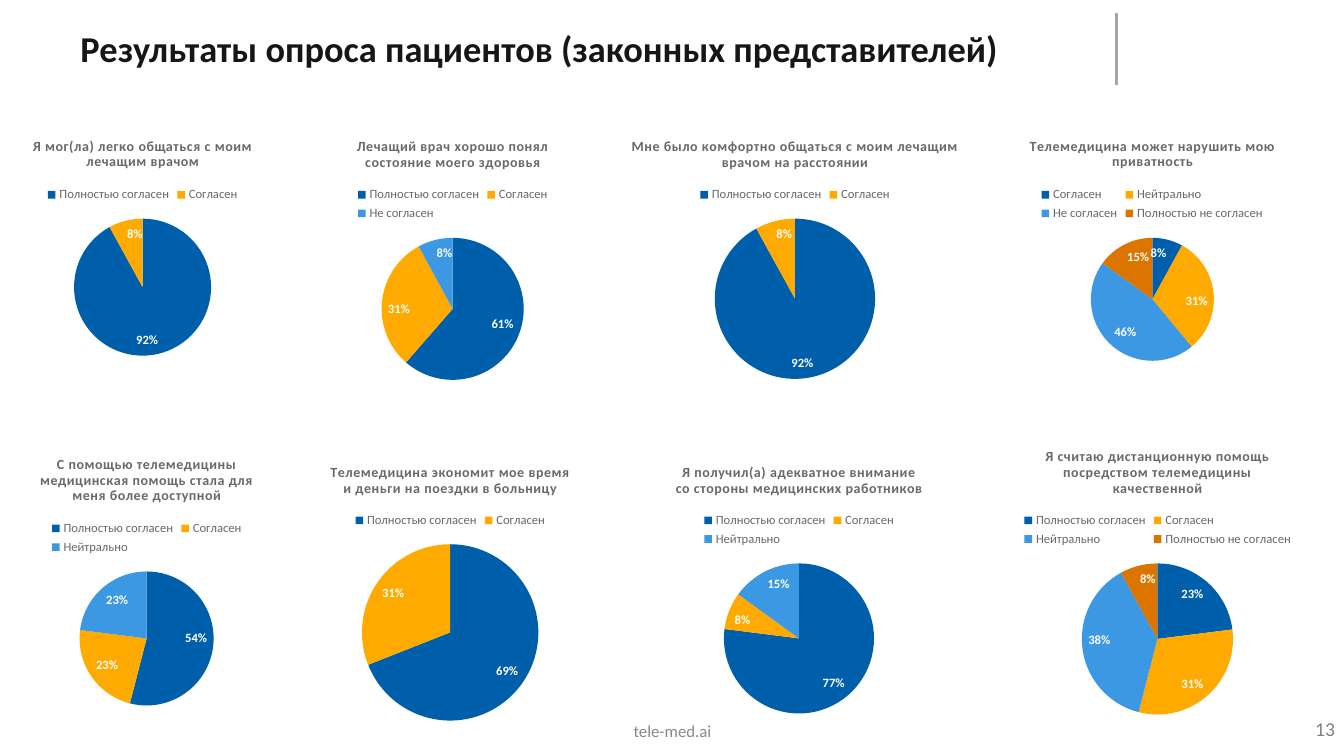
from dataclasses import dataclass
from lxml import etree
from pptx import Presentation
from pptx.chart.data import CategoryChartData
from pptx.dml.color import RGBColor
from pptx.enum.chart import XL_CHART_TYPE, XL_LABEL_POSITION, XL_LEGEND_POSITION
from pptx.enum.shapes import MSO_CONNECTOR
from pptx.enum.text import MSO_ANCHOR, PP_ALIGN
from pptx.oxml.ns import qn
from pptx.util import Inches, Pt

PIE = XL_CHART_TYPE.PIE
IN_END = XL_LABEL_POSITION.INSIDE_END
TOP = XL_LEGEND_POSITION.TOP
STRAIGHT = MSO_CONNECTOR.STRAIGHT
MIDDLE = MSO_ANCHOR.MIDDLE
LEFT, CENTER, RIGHT = PP_ALIGN.LEFT, PP_ALIGN.CENTER, PP_ALIGN.RIGHT


@dataclass(frozen=True)
class Theme:
    font: str = "Calibri"
    ink: str = "151616"
    grey: str = "656A6A"
    page: str = "808080"
    foot: str = "888888"
    rule: str = "A6A6A6"
    white: str = "FFFFFF"
    slices: tuple = ("005FAB", "FFAA00", "3D98E3", "DB7500")
    head_size: int = 26
    page_size: int = 14
    foot_size: int = 12
    title_size: int = 10
    small_size: int = 9


THEME = Theme()
FULL, AGREE, MID, NO, NEVER = (
    "Полностью согласен", "Согласен", "Нейтрально",
    "Не согласен", "Полностью не согласен")

# box, title, title lines, legend rows, legend width, answers
PIES = [
    ((0, 1.23, 2.83, 2.44), "Я мог(ла) легко общаться с моим лечащим врачом",
     2, 1, 1.96, {FULL: 92, AGREE: 8}),
    ((2.97, 1.23, 3.04, 2.68), "Лечащий врач хорошо понял состояние моего здоровья",
     2, 2, 1.96, {FULL: 62, AGREE: 31, NO: 8}),
    ((5.8, 1.23, 4.17, 2.67),
     "Мне было комфортно общаться с моим лечащим врачом на расстоянии",
     2, 1, 1.96, {FULL: 92, AGREE: 8}),
    ((9.66, 1.23, 3.54, 2.49), "Телемедицина может нарушить мою приватность",
     2, 2, 2.28, {AGREE: 8, MID: 31, NO: 46, NEVER: 15}),
    ((0, 4.38, 2.91, 2.76),
     "С помощью телемедицины медицинская помощь стала для меня более доступной",
     3, 2, 1.96, {FULL: 54, AGREE: 23, MID: 23}),
    ((2.89, 4.46, 3.15, 2.83),
     "Телемедицина экономит мое время и деньги на поездки в больницу",
     2, 1, 1.96, {FULL: 69, AGREE: 31}),
    ((6.35, 4.46, 3.15, 2.76),
     "Я получил(а) адекватное внимание со стороны медицинских работников",
     2, 2, 1.96, {FULL: 77, AGREE: 8, MID: 15}),
    ((9.82, 4.3, 3.32, 2.93),
     "Я считаю дистанционную помощь посредством телемедицины качественной",
     3, 2, 2.72, {FULL: 23, AGREE: 31, MID: 38, NEVER: 8}),
]


def style(font, size, color, bold=False):
    font.name = THEME.font
    font.size = Pt(size)
    font.bold = bold
    font.color.rgb = RGBColor.from_string(color)


def add_text(slide, box, text, size, color, align, bold=False, pad=0.05):
    shape = slide.shapes.add_textbox(*map(Inches, box))
    frame = shape.text_frame
    frame.word_wrap = True
    frame.vertical_anchor = MIDDLE
    frame.margin_left = frame.margin_right = Inches(pad)
    frame.margin_top = frame.margin_bottom = Inches(0.04)
    para = frame.paragraphs[0]
    para.alignment = align
    run = para.add_run()
    run.text = text
    style(run.font, size, color, bold)


def set_layout(part, inner=False, **sizes):
    """Place a chart part by fractions of the chart's size."""
    for old in part.findall(qn("c:layout")):
        part.remove(old)
    layout = etree.Element(qn("c:layout"))
    manual = etree.SubElement(layout, qn("c:manualLayout"))
    marks = [("layoutTarget", "inner")] if inner else []
    marks += [("xMode", "edge"), ("yMode", "edge")]
    for tag, val in marks + list(sizes.items()):
        etree.SubElement(manual, qn("c:" + tag)).set("val", str(val))
    spot = part.find(qn("c:legendPos"))
    if spot is None:
        part.insert(0, layout)
    else:
        spot.addnext(layout)


def add_pie(slide, box, title, lines, rows, span, votes):
    data = CategoryChartData()
    data.categories = list(votes)
    data.add_series("Series 1", list(votes.values()))
    frame = slide.shapes.add_chart(PIE, *map(Inches, box), data)
    chart = frame.chart
    style(chart.font, THEME.title_size, THEME.ink)

    chart.has_title = True
    run = chart.chart_title.text_frame.paragraphs[0].add_run()
    run.text = title
    style(run.font, THEME.title_size, THEME.grey, True)
    run.font._element.set("spc", "50")
    chart.chart_title.include_in_layout = False

    chart.has_legend = True
    legend = chart.legend
    legend.position = TOP
    legend.include_in_layout = False
    style(legend.font, THEME.small_size, THEME.grey)

    plot = chart.plots[0]
    plot.vary_by_categories = True
    series = plot.series[0]
    for i, color in enumerate(THEME.slices[:len(votes)]):
        fill = series.points[i].format.fill
        fill.solid()
        fill.fore_color.rgb = RGBColor.from_string(color)
    labels = series.data_labels
    labels.show_percentage = True
    labels.show_value = False
    labels.number_format = "0%"
    labels.number_format_is_linked = False
    labels.position = IN_END
    style(labels.font, THEME.small_size, THEME.white, True)

    wide, high = box[2:]
    key_top = 0.27 + 0.16 * lines
    pie_top = key_top + 0.16 + 0.19 * rows
    size = high - pie_top - 0.14
    set_layout(legend._element, x=(wide - span) / 2 / wide, y=key_top / high)
    area = chart._chartSpace.chart.plotArea
    set_layout(area, True, x=(wide - size) / 2 / wide, y=pie_top / high,
               w=size / wide, h=size / high)


def add_frame(slide):
    """Add the heading, rule, footer and page number."""
    line = slide.shapes.add_connector(
        STRAIGHT, *map(Inches, (11.07, 0.13, 11.07, 0.84)))
    line.line.color.rgb = RGBColor.from_string(THEME.rule)
    line.line.width = Pt(2)
    etree.SubElement(line._element.spPr, qn("a:effectLst"))
    add_text(slide, (11.46, 7.02, 1.88, 0.41), "13",
             THEME.page_size, THEME.page, RIGHT, pad=0.1)
    add_text(slide, (0.7, 0, 9.93, 0.96),
             "Результаты опроса пациентов (законных представителей)",
             THEME.head_size, THEME.ink, LEFT, True, 0.1)
    add_text(slide, (4.47, 7.12, 4.4, 0.27), "tele-med.ai",
             THEME.foot_size, THEME.foot, CENTER)


def main():
    deck = Presentation()
    deck.slide_width, deck.slide_height = Inches(13.33), Inches(7.5)
    slide = deck.slides.add_slide(deck.slide_layouts[6])
    add_frame(slide)
    for pie in PIES:
        add_pie(slide, *pie)
    deck.save("out.pptx")


if __name__ == "__main__":
    main()
